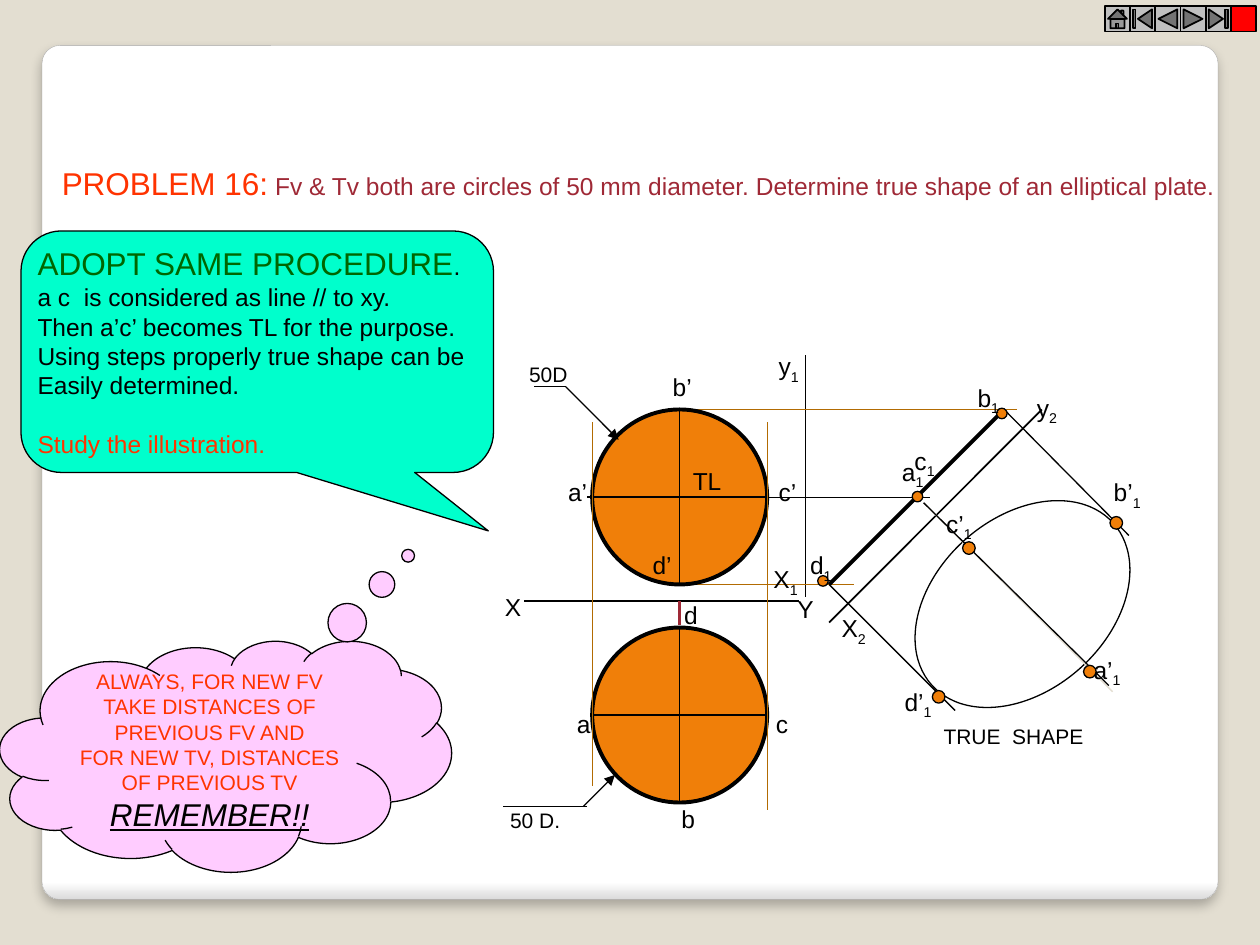
from lxml.etree import SubElement
from pptx import Presentation
from pptx.dml.color import RGBColor
from pptx.enum.shapes import MSO_CONNECTOR, MSO_SHAPE as SHAPE
from pptx.enum.text import MSO_ANCHOR, PP_ALIGN as ALIGN
from pptx.oxml.ns import qn
from pptx.util import Pt

COLORS = {
    "background": "E3DED1", "white": "FFFFFF", "edge": "DADADA", "card_line": "A4A4A4",
    "black": "000000", "orange": "F07F09", "projector": "B26B02", "maroon": "9F2936",
    "red_text": "FF3300", "green": "006600", "mint": "00FFCC", "pink": "FFCCFF",
    "gray": "C0C0C0", "red": "FF0000",
}


def color(name):
    return RGBColor.from_string(COLORS[name])


class Sketch:
    """Holds the text style and the slide being drawn; lengths are points."""

    def __init__(self, slide, font="Arial", size=14):
        self.slide, self.font, self.size = slide, font, size
        slide.background.fill.solid()
        slide.background.fill.fore_color.rgb = color("background")

    def shape(self, kind, left, top, width, height, fill, line="black", weight=0.75,
              adjustments=(), rotation=0):
        shape = self.slide.shapes.add_shape(kind, Pt(left), Pt(top), Pt(width), Pt(height))
        shape.shadow.inherit = False
        shape.fill.solid()
        shape.fill.fore_color.rgb = color(fill)
        shape.line.color.rgb = color(line)
        shape.line.width = Pt(weight)
        shape.rotation = rotation
        for index, value in enumerate(adjustments):
            shape.adjustments[index] = value
        return shape

    def card(self, left, top, width, height):
        """Rounded panel with a shaded bottom edge and a soft shadow."""
        card = self.shape(SHAPE.ROUNDED_RECTANGLE, left, top, width, height, "white",
                          "card_line", 0.16, [0.021])
        card.fill.gradient()
        card.fill.gradient_angle = 270
        for stop, name, position in zip(card.fill.gradient_stops, ("white", "edge"), (0.98, 1)):
            stop.color.rgb = color(name)
            stop.position = position
        effects = card.element.spPr.find(qn("a:effectLst"))
        shadow = SubElement(effects, qn("a:outerShdw"), blurRad=str(Pt(6)), dist=str(Pt(4)),
                            dir="5400000", algn="t", rotWithShape="0")
        shade = SubElement(shadow, qn("a:srgbClr"), val=COLORS["black"])
        SubElement(shade, qn("a:alpha"), val="25000")

    def line(self, x1, y1, x2, y2, name="black", weight=0.75, arrow=False):
        connector = self.slide.shapes.add_connector(
            MSO_CONNECTOR.STRAIGHT, Pt(x1), Pt(y1), Pt(x2), Pt(y2))
        connector.line.color.rgb = color(name)
        connector.line.width = Pt(weight)
        properties = connector.element.spPr
        if arrow:
            SubElement(properties.find(qn("a:ln")), qn("a:tailEnd"), type="triangle")
        SubElement(properties, qn("a:effectLst"))

    def dot(self, left, top, size):
        self.shape(SHAPE.OVAL, left, top, size, size, "orange")

    def set_paragraphs(self, text_frame, paragraphs, align=ALIGN.LEFT):
        """Fill a frame with paragraphs, each a list of (text, size, colour) runs."""
        text_frame.text = "\n".join("" for _ in paragraphs)
        for paragraph, runs in zip(text_frame.paragraphs, paragraphs):
            paragraph.alignment = align
            for text, size, name in runs:
                run = paragraph.add_run()
                run.text = text
                run.font.name = self.font
                run.font.size = Pt(size)
                run.font.color.rgb = color(name)

    def text(self, left, top, width, height, paragraphs, align=ALIGN.LEFT):
        box = self.slide.shapes.add_textbox(Pt(left), Pt(top), Pt(width), Pt(height))
        box.text_frame.word_wrap = False
        self.set_paragraphs(box.text_frame, paragraphs, align)
        return box.text_frame

    def label(self, left, top, width, text, subscript="", size=None):
        size = size or self.size
        runs = [(part, size, "black") for part in (text, subscript) if part]
        frame = self.text(left, top, width, size + 9.8, [runs])
        if subscript:
            frame.paragraphs[0].runs[1].font._element.set("baseline", "-25000")


def draw_auxiliary_views(sketch):
    sketch.shape(SHAPE.OVAL, 514.8, 295.9, 139, 98.6, "white", rotation=318.3)
    sketch.line(460.1, 203, 460.1, 341.3)
    sketch.line(338.4, 284.4, 531.4, 284.4)
    sketch.line(388.4, 234, 581, 234, "projector")
    sketch.line(388.4, 334, 488.2, 334, "projector")
    sketch.line(473.8, 334, 573.8, 234, weight=2.25)
    sketch.line(473.8, 355.7, 595.4, 234, weight=1)
    sketch.line(473.8, 334, 545.8, 406)
    sketch.line(573.8, 234, 645.1, 306)
    sketch.line(527.8, 287.3, 635.8, 395.3, "background")
    sketch.line(527.8, 287.3, 633.6, 391.7)
    for left, top in [(532.8, 394.6), (550.1, 309.6), (619.2, 380.2), (634.3, 295.2)]:
        sketch.dot(left, top, 7.2)


def draw_circle_views(sketch):
    left, diameter = 338.4, 100
    middle, right = left + diameter / 2, left + diameter
    sketch.line(299.5, 343.4, 456.5, 343.4)
    for top, overhang in [(234, 2.9), (358.6, 0)]:
        center = top + diameter / 2
        sketch.shape(SHAPE.OVAL, left, top, diameter, diameter, "orange", weight=2.25)
        sketch.line(left - overhang, center, right, center)
        sketch.line(middle, top, middle, top + diameter)
    sketch.line(left, 241.2, left, 449.3, "projector")
    sketch.line(right, 241.2, right, 463, "projector")
    sketch.line(middle, 343.4, middle, 357.1, "maroon", 1.5)
    sketch.line(333.4, 460.8, 351.4, 442.8, arrow=True)
    sketch.line(335.5, 460.8, 287.3, 460.8)
    sketch.line(323.3, 221, 353.5, 251.3, arrow=True)
    sketch.line(305.3, 221, 323.3, 221)
    for dot_left, dot_top in [(467.3, 329), (521.3, 280.8), (569.5, 233.3)]:
        sketch.dot(dot_left, dot_top, 6)


def draw_labels(sketch):
    for label in [
        (437.8, 197.3, 26.6, "y", "1"), (473.8, 347, 28.8, "X", "2"),
        (434.9, 319, 35.3, "X", "1"), (585.4, 221, 26.6, "y", "2"),
        (508.3, 257.8, 27.4, "a", "1"), (515.5, 251.3, 26.6, "c", "1"),
        (455.8, 311, 27.4, "d", "1"), (551.5, 215.3, 27.4, "b", "1"),
        (533.5, 287.3, 29.5, "c’", "1"), (509.8, 388.8, 30.2, "d’", "1"),
        (629.3, 269.3, 30.2, "b’", "1"), (617.8, 370.8, 30.2, "a’", "1"),
        (322.6, 401.8, 22.3, "a"), (382.3, 455.8, 22.3, "b"),
        (436.3, 401.8, 21.6, "c"), (383.8, 339.1, 23.8, "d"),
        (448.6, 336.2, 23.8, "Y"), (281.5, 334.8, 23.8, "X"),
        (317.5, 269.3, 25.2, "a’"), (365.8, 311, 25.2, "d’"),
        (437.8, 269.3, 24.5, "c’"), (377.3, 208.8, 25.2, "b’"),
        (388.8, 262.8, 31, "TL"),
        (532.1, 409.7, 94.3, "TRUE  SHAPE", "", 12),
        (284.4, 457.9, 43.2, "50 D.", "", 12), (295.2, 203, 36.7, "50D", "", 12),
    ]:
        sketch.label(*label)


def draw_notes(sketch):
    sketch.text(15.8, 90, 698.4, 26.6, [[
        ("PROBLEM 16:", 18, "red_text"), (" ", 14, "black"),
        ("Fv & Tv both are circles of 50 mm diameter. "
         "Determine true shape of an elliptical plate.", 14, "maroon")]], ALIGN.CENTER)

    sketch.shape(SHAPE.ROUNDED_RECTANGULAR_CALLOUT, 12, 132, 270, 138, "mint",
                 adjustments=[0.489, 0.742, 0.167])
    steps = ["a c  is considered as line // to xy.", "Then a’c’ becomes TL for the purpose.",
             "Using steps properly true shape can be", "Easily determined."]
    procedure = sketch.text(14.4, 136.1, 275.8, 126.7, [
        [("ADOPT SAME PROCEDURE", 18, "green"), (".", 14, "black")],
        *[[(step, 14, "black")] for step in steps],
        [("Study the illustration.", 14, "red_text")]])
    procedure.paragraphs[-1].space_before = Pt(16.8)

    cloud = sketch.shape(SHAPE.CLOUD_CALLOUT, 0, 366, 258, 132, "pink",
                         adjustments=[0.404, -0.867])
    cloud.text_frame.word_wrap = True
    cloud.text_frame.vertical_anchor = MSO_ANCHOR.MIDDLE
    sketch.set_paragraphs(cloud.text_frame, [
        [("ALWAYS, FOR NEW FV TAKE DISTANCES OF PREVIOUS FV AND", 12, "red_text")],
        [("FOR NEW TV, DISTANCES OF PREVIOUS TV", 12, "red_text")],
        [("REMEMBER!!", 18, "black")]], ALIGN.CENTER)
    reminder = cloud.text_frame.paragraphs[-1].runs[0].font
    reminder.italic = reminder.underline = True


def draw_navigation(sketch):
    size = 14.4
    buttons = [SHAPE.ACTION_BUTTON_HOME, SHAPE.ACTION_BUTTON_BEGINNING,
               SHAPE.ACTION_BUTTON_BACK_OR_PREVIOUS, SHAPE.ACTION_BUTTON_FORWARD_OR_NEXT,
               SHAPE.ACTION_BUTTON_END, SHAPE.ACTION_BUTTON_CUSTOM]
    for index, button in enumerate(buttons):
        fill = "red" if button == SHAPE.ACTION_BUTTON_CUSTOM else "gray"
        sketch.shape(button, 631.4 + index * size, 3.6, size, size, fill, weight=1)


def main():
    presentation = Presentation()
    presentation.slide_width, presentation.slide_height = Pt(720), Pt(540)
    sketch = Sketch(presentation.slides.add_slide(presentation.slide_layouts[6]))
    sketch.card(24, 26, 672, 488)
    draw_auxiliary_views(sketch)
    draw_circle_views(sketch)
    draw_labels(sketch)
    draw_notes(sketch)
    draw_navigation(sketch)
    presentation.save("out.pptx")


if __name__ == "__main__":
    main()
